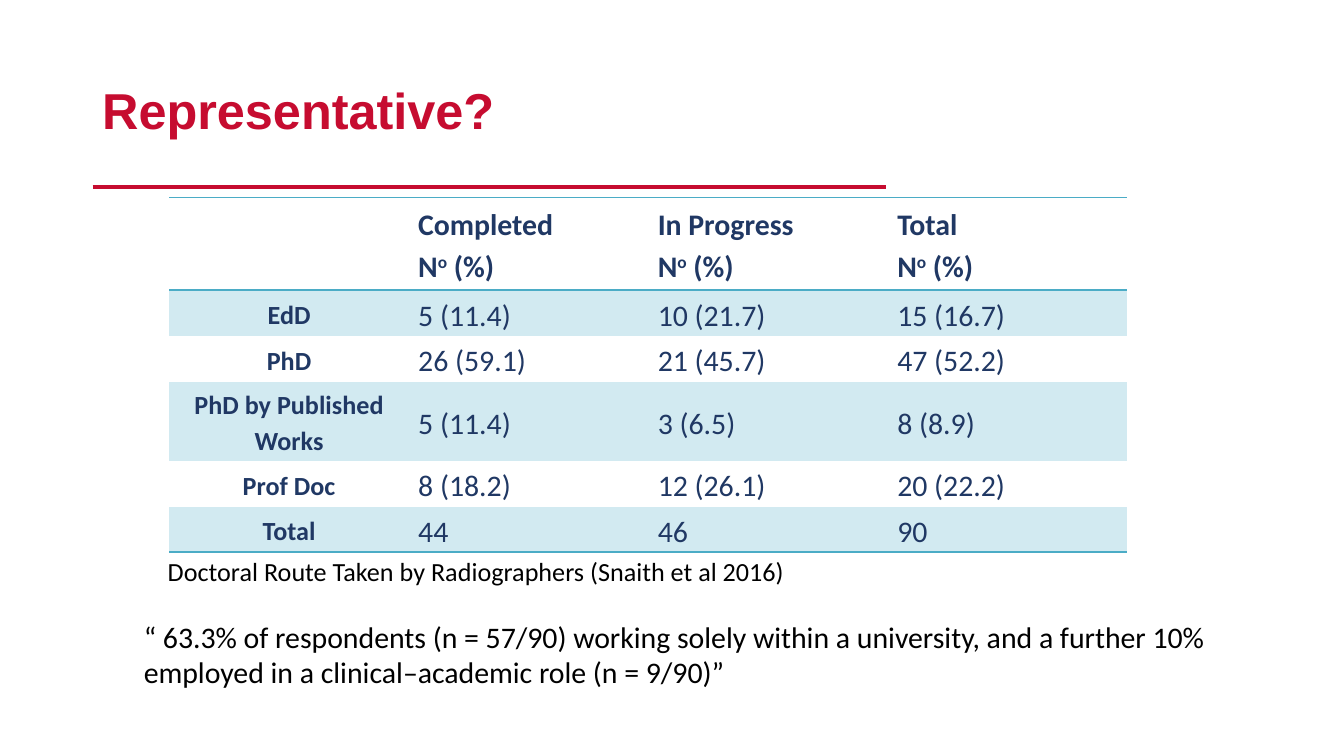
from dataclasses import dataclass

from lxml import etree
from pptx import Presentation
from pptx.dml.color import RGBColor
from pptx.enum import shapes, text
from pptx.oxml import ns
from pptx.util import Inches, Pt

RED = RGBColor(0xC6, 0x0C, 0x30)
NAVY = RGBColor(0x20, 0x38, 0x64)
TEAL = RGBColor(0x4B, 0xAC, 0xC6)
PALE_TEAL = RGBColor(0xD2, 0xEA, 0xF1)
BLACK = RGBColor(0, 0, 0)

PLAIN_TABLE_STYLE = "{2D5ABB26-0587-4C30-8999-92F81FD0307C}"
CELL_INSETS = {"margin_left": Inches(0.07), "margin_right": Inches(0.07),
               "margin_top": 0, "margin_bottom": 0}
TIGHT_INSETS = {**CELL_INSETS, "margin_top": Inches(0.04),
                "margin_bottom": Inches(0.04)}
TABLE_WIDTH = Inches(7.13)
HEADINGS = ["Completed", "In Progress", "Total"]


@dataclass
class Style:
    size: float
    color: RGBColor
    bold: bool = False
    name: str = "Calibri"


@dataclass
class Route:
    name: str
    counts: list[str]
    height: float = 0.34


@dataclass
class Note:
    words: str
    place: tuple[float, float, float, float]
    size: float
    insets: dict


HEADING = Style(16, NAVY, True)
ROUTE_NAME = Style(14, NAVY, True)
COUNT = Style(16, NAVY)

ROUTES = [
    Route("EdD", ["5 (11.4)", "10 (21.7)", "15 (16.7)"]),
    Route("PhD", ["26 (59.1)", "21 (45.7)", "47 (52.2)"]),
    Route("PhD by Published Works", ["5 (11.4)", "3 (6.5)", "8 (8.9)"], 0.59),
    Route("Prof Doc", ["8 (18.2)", "12 (26.1)", "20 (22.2)"]),
    Route("Total", ["44", "46", "90"]),
]
NOTES = [
    Note("“ 63.3% of respondents (n = 57/90) working solely within a university, "
         "and a further 10% employed in a clinical–academic role (n = 9/90)”",
         (1, 4.56, 8.45, 0.92), 16, TIGHT_INSETS),
    Note("Doctoral Route Taken by Radiographers (Snaith et al 2016)",
         (1.15, 4.08, 6.96, 0.34), 14, {}),
]


def set_all(target, values: dict) -> None:
    for name, value in values.items():
        setattr(target, name, value)


def add_span(para, words: str, style: Style, baseline: int = 0) -> None:
    span = para.add_run()
    span.text = words
    set_all(span.font, {"name": style.name, "size": Pt(style.size),
                        "bold": style.bold})
    span.font.color.rgb = style.color
    if baseline:
        span._r.get_or_add_rPr().set("baseline", str(baseline * 1000))


def add_edge(cell, edge: str, ruled: bool) -> None:
    line = etree.SubElement(cell._tc.get_or_add_tcPr(), ns.qn(f"a:ln{edge}"),
                            w=str(Pt(1)))
    if ruled:
        fill = etree.SubElement(line, ns.qn("a:solidFill"))
        etree.SubElement(fill, ns.qn("a:srgbClr"), val=str(TEAL))
    else:
        etree.SubElement(line, ns.qn("a:noFill"))


def format_cell(cell, ruled_edges: str, shaded: bool) -> None:
    set_all(cell, {**CELL_INSETS, "vertical_anchor": text.MSO_ANCHOR.MIDDLE})
    for edge in "LRTB":
        add_edge(cell, edge, edge in ruled_edges)
    if shaded:
        cell.fill.solid()
        cell.fill.fore_color.rgb = PALE_TEAL
    else:
        cell.fill.background()
    for para in cell.text_frame.paragraphs:
        para.line_spacing = 1.15


def add_routes_table(page) -> None:
    heights = [0.69] + [route.height for route in ROUTES]
    columns = len(HEADINGS) + 1
    frame = page.shapes.add_table(
        len(heights), columns, Inches(1.26), Inches(1.47),
        TABLE_WIDTH, Inches(sum(heights)))
    table = frame.table
    table._tbl.tblPr.find(ns.qn("a:tableStyleId")).text = PLAIN_TABLE_STYLE
    set_all(table, {"first_row": False, "horz_banding": False})
    for row, height in zip(table.rows, heights):
        row.height = Inches(height)

    # Heading row
    for index, heading in enumerate(HEADINGS, 1):
        box = table.cell(0, index).text_frame
        add_span(box.paragraphs[0], heading, HEADING)
        para = box.add_paragraph()
        add_span(para, "N", HEADING)
        add_span(para, "o", HEADING, baseline=30)
        add_span(para, " (%)", HEADING)

    # One row for each route
    for index, route in enumerate(ROUTES, 1):
        para = table.cell(index, 0).text_frame.paragraphs[0]
        para.alignment = text.PP_ALIGN.CENTER
        add_span(para, route.name, ROUTE_NAME)
        for column, count in enumerate(route.counts, 1):
            para = table.cell(index, column).text_frame.paragraphs[0]
            add_span(para, count, COUNT)

    # Rules and alternate shading
    ruled_edges = {0: "TB", 1: "T", len(ROUTES): "B"}
    for index, row in enumerate(table.rows):
        for cell in row.cells:
            format_cell(cell, ruled_edges.get(index, ""), index % 2 == 1)


def add_note(page, note: Note) -> None:
    box = page.shapes.add_textbox(*map(Inches, note.place)).text_frame
    set_all(box, {"word_wrap": True, **note.insets})
    add_span(box.paragraphs[0], note.words, Style(note.size, BLACK))


def add_title(page, words: str) -> None:
    title = page.shapes.title
    set_all(title, {"left": Inches(0.69), "top": Inches(0.3),
                    "width": Inches(7.26), "height": Inches(1.09)})
    set_all(title.text_frame, {**TIGHT_INSETS, "word_wrap": True,
                               "auto_size": text.MSO_AUTO_SIZE.NONE,
                               "vertical_anchor": text.MSO_ANCHOR.MIDDLE})
    para = title.text_frame.paragraphs[0]
    set_all(para, {"alignment": text.PP_ALIGN.LEFT, "line_spacing": 0.9})
    add_span(para, words, Style(27, RED, True, "Arial"))


def add_title_rule(page) -> None:
    rule = page.shapes.add_connector(
        shapes.MSO_CONNECTOR.STRAIGHT,
        Inches(0.69), Inches(1.39), Inches(6.59), Inches(1.39))
    rule.line.color.rgb = RED
    rule.line.width = Pt(2.25)
    etree.SubElement(rule._element.spPr, ns.qn("a:effectLst"))


def main() -> None:
    deck = Presentation()
    # Widescreen, 16 by 9
    set_all(deck, {"slide_width": Inches(10),
                   "slide_height": Inches(10) * 9 // 16})
    page = deck.slides.add_slide(deck.slide_layouts[5])
    add_title_rule(page)
    add_title(page, "Representative?")
    add_routes_table(page)
    for note in NOTES:
        add_note(page, note)
    deck.save("out.pptx")


if __name__ == "__main__":
    main()
